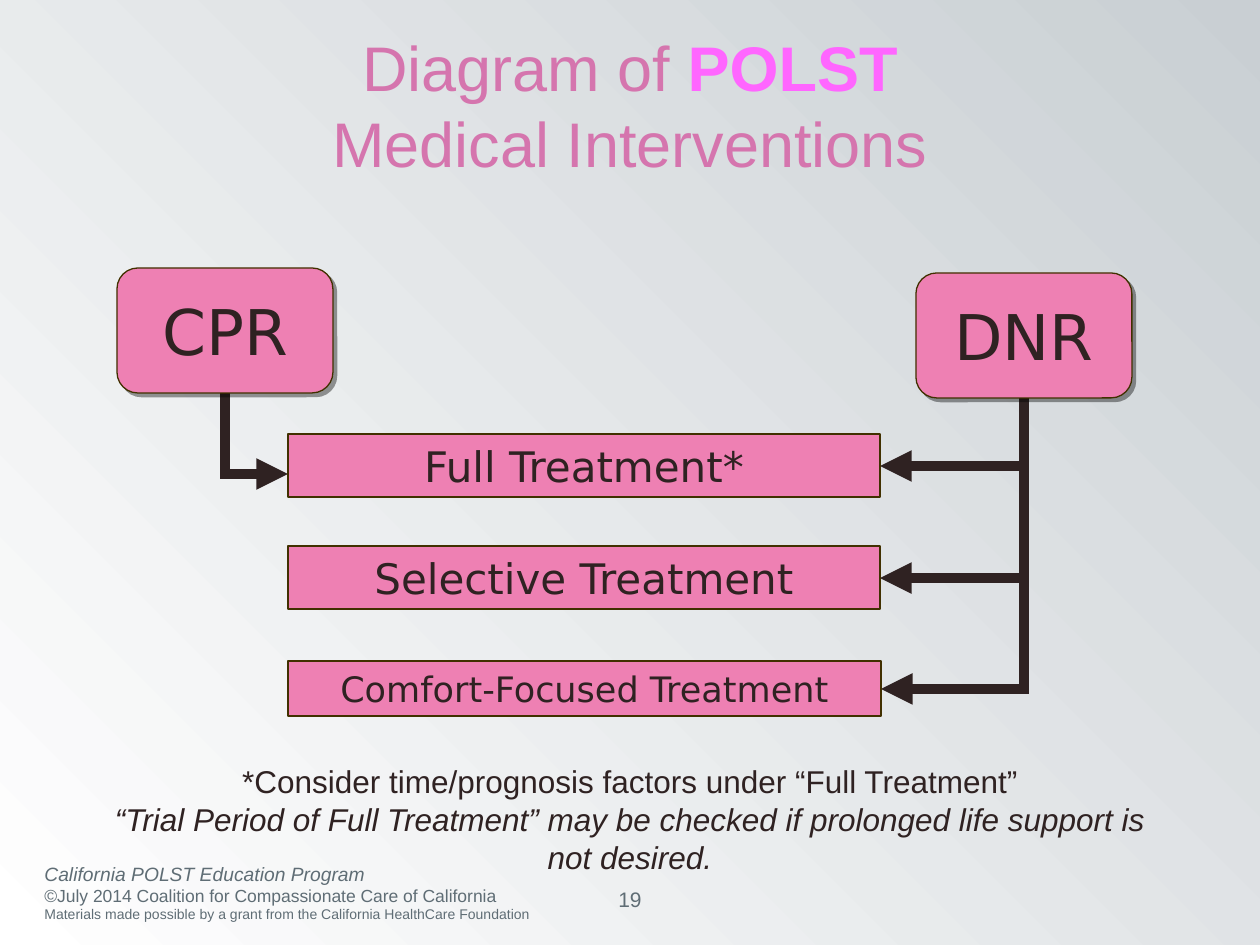
from lxml.etree import SubElement
from pptx import Presentation
from pptx.dml.color import RGBColor
from pptx.enum.shapes import MSO_CONNECTOR, MSO_SHAPE
from pptx.enum.text import MSO_ANCHOR as Anchor, PP_ALIGN as Align
from pptx.oxml.ns import qn
from pptx.util import Pt

PX = 914400 / 126
INK, PINK, OUTLINE = "2F2222", "EE80B3", "413000"
TITLE_PINK, BRIGHT_PINK, GREY = "D575AE", "FF66FF", "5F6D75"
SANS, LABEL = "Arial", "DejaVu Sans"

# Each paragraph is a list of runs: (text, size, colour, style)
TITLE = [[("Diagram of ", 36, TITLE_PINK, ""), ("POLST", 36, BRIGHT_PINK, "bold"),
          ("\vMedical Interventions", 36, TITLE_PINK, "")]]
NOTE = [
    [("*Consider time/prognosis factors under “Full Treatment”", 18, INK, "")],
    [("“Trial Period of Full Treatment” may be checked if prolonged life support is not desired.",
      18, INK, "italic")],
]
FOOTER = [
    [("California POLST Education Program", 11, GREY, "italic")],
    [("©July 2014 Coalition for Compassionate Care of California", 10, GREY, "")],
    [("Materials made possible by a grant from the California HealthCare Foundation", 8, GREY, "")],
]
PAGE_NUMBER = [[("19", 12, GREY, "")]]

# (paragraphs, left, top, width, height, alignment, anchor)
TEXTS = [
    (TITLE, 63, 24, 1134, 161, Align.CENTER, Anchor.MIDDLE),
    (NOTE, 78, 756, 1104, 127, Align.CENTER, Anchor.TOP),
    (FOOTER, 32, 863, 514, 66, Align.LEFT, Anchor.BOTTOM),
    (PAGE_NUMBER, 572, 880, 116, 37, Align.CENTER, Anchor.TOP),
]

# name: (left, top, width, height, text size)
ORDERS = {"CPR": (117, 268, 216, 125, 36), "DNR": (916, 273, 216, 125, 36)}
TREATMENTS = {
    "Full Treatment*": (288, 434, 592, 63, 24),
    "Selective Treatment": (288, 546, 592, 63, 24),
    "Comfort-Focused Treatment": (288, 661, 593, 55, 20),
}
# (order, treatment, height of the arrowhead)
ARROWS = [
    ("CPR", "Full Treatment*", 474),
    ("DNR", "Full Treatment*", 466),
    ("DNR", "Selective Treatment", 578),
    ("DNR", "Comfort-Focused Treatment", 689),
]


def emu(*lengths):
    return [round(length * PX) for length in lengths]


def colour(value):
    return RGBColor.from_string(value)


def write(frame, paragraphs, font, align, anchor):
    frame.word_wrap = True
    frame.vertical_anchor = anchor
    for number, runs in enumerate(paragraphs):
        para = frame.add_paragraph() if number else frame.paragraphs[0]
        para.alignment = align
        for text, size, ink, style in runs:
            if text.startswith("\v"):
                para.add_line_break()
            span = para.add_run()
            span.text = text.lstrip("\v")
            span.font.name, span.font.size = font, Pt(size)
            span.font.color.rgb = colour(ink)
            span.font.bold = style == "bold"
            span.font.italic = style == "italic"


def add_box(page, kind, name, place):
    box = page.shapes.add_shape(kind, *emu(*place[:4]))
    box.shadow.inherit = False
    box.fill.solid()
    box.fill.fore_color.rgb = colour(PINK)
    box.line.color.rgb = colour(OUTLINE)
    box.line.width = Pt(0.75)
    write(box.text_frame, [[(name, place[4], INK, "")]], LABEL, Align.CENTER, Anchor.MIDDLE)
    return box


def add_shadow(box):
    effects = box._element.spPr.find(qn("a:effectLst"))
    shadow = SubElement(effects, qn("a:outerShdw"), dist=str(Pt(3)), dir="2700000", rotWithShape="0")
    shade = SubElement(shadow, qn("a:srgbClr"), val="000000")
    SubElement(shade, qn("a:alpha"), val="40000")


def add_elbow(page, x, y, tip_x, tip_y):
    """Draw an arrow that goes down from (x, y), then sideways to its tip."""
    drop, run = tip_y - y, abs(tip_x - x)
    middle_x, middle_y = (x + tip_x) / 2, (y + tip_y) / 2
    left, top = middle_x - drop / 2, middle_y - run / 2  # frame before its quarter turn
    arrow = page.shapes.add_connector(
        MSO_CONNECTOR.ELBOW, *emu(left, top, left + drop, top + run))
    arrow.line.color.rgb = colour(INK)
    arrow.line.width = Pt(6)
    properties = arrow._element.spPr
    properties.find(qn("a:prstGeom")).set("prst", "bentConnector2")
    frame = properties.find(qn("a:xfrm"))
    if tip_x > x:
        frame.set("rot", "16200000")
        frame.set("flipH", "1")
    else:
        frame.set("rot", "5400000")
    line = properties.find(qn("a:ln"))
    SubElement(line, qn("a:miter"), lim="800000")
    SubElement(line, qn("a:tailEnd"), type="triangle")
    SubElement(properties, qn("a:effectLst"))


def main():
    deck = Presentation()
    deck.slide_width, deck.slide_height = emu(1260, 945)
    page = deck.slides.add_slide(deck.slide_layouts[6])

    backdrop = page.background.fill
    backdrop.gradient()
    backdrop.gradient_angle = 45
    for stop, shade in zip(backdrop.gradient_stops, ("FFFFFF", "C9CFD3")):
        stop.color.rgb = colour(shade)

    for paragraphs, *place, align, anchor in TEXTS:
        box = page.shapes.add_textbox(*emu(*place))
        write(box.text_frame, paragraphs, SANS, align, anchor)

    for order, treatment, tip_y in ARROWS:
        left, top, width, height, _ = ORDERS[order]
        x = left + width / 2
        bar_left, _, bar_width, *_ = TREATMENTS[treatment]
        tip_x = bar_left if x < bar_left else bar_left + bar_width
        add_elbow(page, x, top + height, tip_x, tip_y)

    for name, place in ORDERS.items():
        add_shadow(add_box(page, MSO_SHAPE.ROUNDED_RECTANGLE, name, place))
    for name, place in TREATMENTS.items():
        add_box(page, MSO_SHAPE.RECTANGLE, name, place)

    deck.save("out.pptx")


if __name__ == "__main__":
    main()
